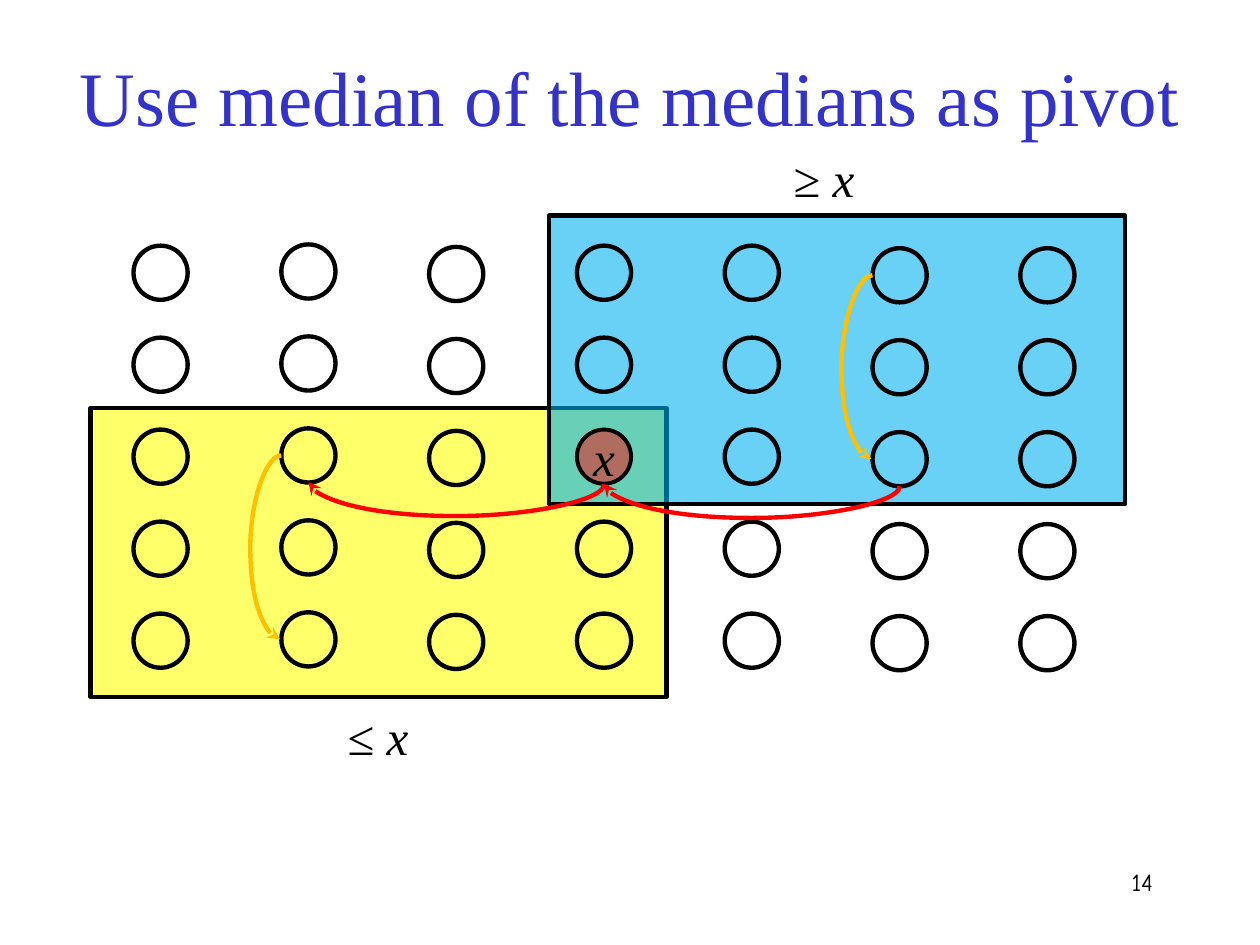
from dataclasses import dataclass

from lxml.etree import SubElement
from pptx import Presentation
from pptx.dml.color import RGBColor
from pptx.enum.shapes import MSO_CONNECTOR, MSO_SHAPE
from pptx.enum.text import MSO_ANCHOR, PP_ALIGN
from pptx.oxml.ns import qn
from pptx.util import Inches, Pt


@dataclass(frozen=True)
class Theme:
    """Colours, fonts and sizes of the slide."""

    ink: str = "000000"
    title: str = "3333CC"
    smaller: str = "FFFF00"
    larger: str = "00B0F0"
    pivot: str = "FF0000"
    order: str = "FFC000"
    serif: str = "Times New Roman"
    casual: str = "Comic Neue"
    title_size: float = 44
    label_size: float = 28
    number_size: float = 14
    stroke: float = 2.5
    pivot_stroke: float = 2.25


THEME = Theme()
DOT = 0.43
COLUMN_GAP = 1.173
ROW_GAP = 0.73
COLUMN_TOPS = (1.95, 1.94, 1.96, 1.95, 1.95, 1.97, 1.97)
ROWS = 5
PIVOT = (3, 2)


def write(frame, *parts, size=THEME.label_size, font=THEME.serif, color=THEME.ink,
          align=PP_ALIGN.CENTER, anchor=MSO_ANCHOR.TOP, wrap=True):
    """Fill a text frame with (text, italic) parts in one paragraph."""
    frame.word_wrap = wrap
    frame.vertical_anchor = anchor
    para = frame.paragraphs[0]
    para.alignment = align
    for text, italic in parts:
        span = para.add_run()
        span.text = text
        span.font.name = font
        span.font.size = Pt(size)
        span.font.italic = italic
        span.font.color.rgb = RGBColor.from_string(color)


def add_text(page, box, *parts, **style):
    """Place a text box and write its parts."""
    frame = page.shapes.add_textbox(*map(Inches, box)).text_frame
    write(frame, *parts, **style)


def add_outline(page, kind, box, fill=None, opacity=100, stroke=THEME.stroke):
    """Place an outlined shape, hollow or with a translucent fill."""
    shape = page.shapes.add_shape(kind, *map(Inches, box))
    shape.shadow.inherit = False
    shape.line.color.rgb = RGBColor.from_string(THEME.ink)
    shape.line.width = Pt(stroke)
    if fill is None:
        shape.fill.background()
    else:
        shape.fill.solid()
        shape.fill.fore_color.rgb = RGBColor.from_string(fill)
        color = shape.fill._xPr.find(qn("a:solidFill"))[0]
        SubElement(color, qn("a:alpha")).set("val", str(opacity * 1000))
    return shape


def add_arc(page, box, bulge, color, turned=False):
    """Draw a curved arrow in a thin upright box, turned to lie flat if asked."""
    left, top, width, height = box
    arc = page.shapes.add_connector(
        MSO_CONNECTOR.CURVE, Inches(left + width), Inches(top),
        Inches(left), Inches(top + height))
    arc.line.color.rgb = RGBColor.from_string(color)
    arc.line.width = Pt(THEME.stroke)
    properties = arc._element.spPr
    if turned:
        properties.find(qn("a:xfrm")).set("rot", "5400000")
    guides = properties.find(qn("a:prstGeom")).find(qn("a:avLst"))
    guide = SubElement(guides, qn("a:gd"))
    guide.set("name", "adj1")
    guide.set("fmla", f"val {round(bulge / width * 100000)}")
    SubElement(arc.line._get_or_add_ln(), qn("a:tailEnd")).set("type", "stealth")
    SubElement(properties, qn("a:effectLst"))


def add_column_arc(page, start, end):
    """Link the left sides of two dots in a column, bowing left."""
    add_arc(page, (start[0] - 0.01, start[1], 0.01, end[1] - start[1]),
            0.25, THEME.order)


def add_median_arc(page, start, end):
    """Link the undersides of two medians from right to left, bowing down."""
    drop, reach = 0.02, start[0] - end[0]
    center_x, center_y = (start[0] + end[0]) / 2, (start[1] + end[1]) / 2
    add_arc(page, (center_x - drop / 2, center_y - reach / 2, drop, reach),
            -0.25, THEME.pivot, turned=True)


def add_region(page, box, label_box, sign, color):
    """Place a half of the comparison and its label."""
    add_outline(page, MSO_SHAPE.RECTANGLE, box, color, 59)
    add_text(page, label_box, (f"{sign} ", False), ("x", True))


def add_dots(page, left):
    """Place the grid of elements with the pivot in the middle."""
    for column, top in enumerate(COLUMN_TOPS):
        for row in range(ROWS):
            box = (left + column * COLUMN_GAP, top + row * ROW_GAP, DOT, DOT)
            if (column, row) == PIVOT:
                dot = add_outline(page, MSO_SHAPE.OVAL, box, THEME.pivot, 48,
                                  THEME.pivot_stroke)
                write(dot.text_frame, ("x", True), anchor=MSO_ANCHOR.MIDDLE, wrap=False)
            else:
                add_outline(page, MSO_SHAPE.OVAL, box)


def add_arrows(page, left):
    """Link the medians in order and one column on each side."""
    def side(column, row):
        """Return the left point of a dot."""
        return left + column * COLUMN_GAP, COLUMN_TOPS[column] + row * ROW_GAP + DOT / 2

    def underside(column):
        """Return the bottom point of a column's median."""
        x, y = side(column, 2)
        return x + DOT / 2, y + DOT / 2

    add_column_arc(page, side(5, 0), side(5, 2))
    add_median_arc(page, underside(5), underside(3))
    add_median_arc(page, underside(3), underside(1))
    add_column_arc(page, side(1, 2), side(1, 4))


def main():
    """Build and save the deck."""
    deck = Presentation()
    deck.slide_width, deck.slide_height = Inches(10), Inches(7.5)
    page = deck.slides.add_slide(deck.slide_layouts[6])
    add_region(page, (0.72, 3.24, 4.57, 2.29), (2.49, 5.56, 1.02, 0.57),
               "≤", THEME.smaller)
    add_region(page, (4.36, 1.71, 4.57, 2.29), (6.03, 1.13, 1.02, 0.57),
               "≥", THEME.larger)
    add_dots(page, 1.06)
    add_arrows(page, 1.06)
    add_text(page, (0, 0.34, 10, 0.84), ("Use median of the medians as pivot", False),
             size=THEME.title_size, color=THEME.title, anchor=MSO_ANCHOR.MIDDLE)
    add_text(page, (7.17, 6.83, 2.08, 0.5), ("14", False), size=THEME.number_size,
             font=THEME.casual, align=PP_ALIGN.RIGHT)
    deck.save("out.pptx")


if __name__ == "__main__":
    main()
